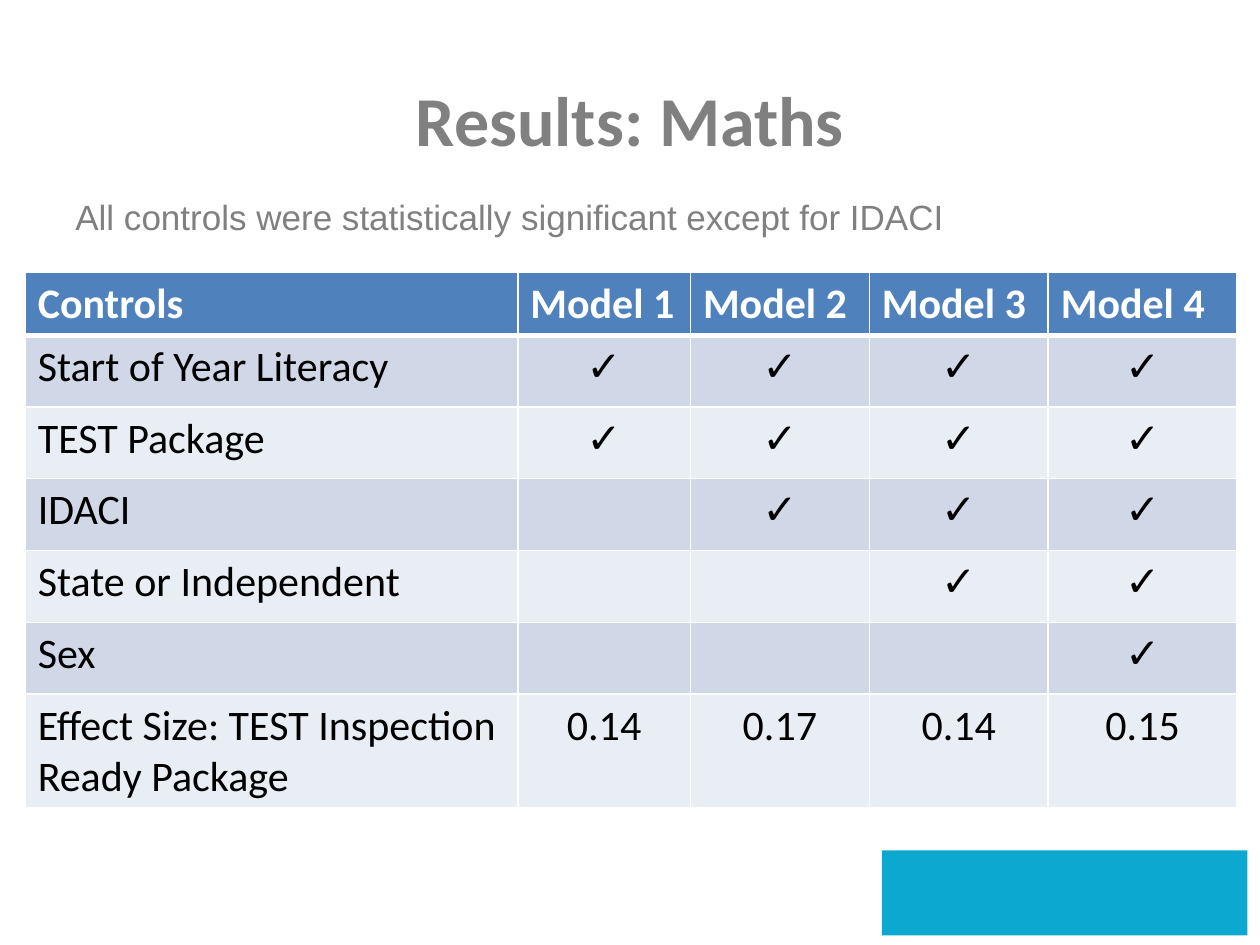
from dataclasses import dataclass

from lxml.etree import SubElement
from pptx import Presentation
from pptx.dml.color import RGBColor
from pptx.enum.shapes import MSO_SHAPE
from pptx.enum.text import MSO_ANCHOR, PP_ALIGN
from pptx.oxml.ns import qn
from pptx.util import Inches, Pt

WIDTH, HEIGHT = 10, 7.5


@dataclass(frozen=True)
class Theme:
    heading_font: str = "Calibri"
    body_font: str = "Arial"
    title_size: int = 40
    note_size: int = 20
    table_size: int = 24
    grey: str = "808080"
    white: str = "FFFFFF"
    black: str = "000000"
    header: str = "4F81BD"
    bands: tuple = ("D0D8E8", "E9EDF4")
    accent: str = "0CA8D0"


THEME = Theme()
CHECK = "✓"
MODEL_COUNT = 4
# Each control with the first model that includes it.
CONTROLS = [
    ("Start of Year Literacy", 1),
    ("TEST Package", 1),
    ("IDACI", 2),
    ("State or Independent", 3),
    ("Sex", 4),
]
EFFECT_LABEL = "Effect Size: TEST Inspection Ready Package"
EFFECT_SIZES = ["0.14", "0.17", "0.14", "0.15"]
COLUMN_WIDTHS = [3.91, 1.37, 1.42, 1.42, 1.5]
ROW_HEIGHTS = [0.37] + [0.57] * len(CONTROLS) + [0.81]


def share(left, top, width, height):
    """Turn shares of the slide's size into lengths."""
    return (Inches(left * WIDTH), Inches(top * HEIGHT),
            Inches(width * WIDTH), Inches(height * HEIGHT))


def add_run(paragraph, text, font, size, color, bold=False):
    run = paragraph.add_run()
    run.text = text
    run.font.name = font
    run.font.size = Pt(size)
    run.font.bold = bold
    run.font.color.rgb = RGBColor.from_string(color)


def add_text(slide, box, text, font, size, bold=False,
             align=PP_ALIGN.LEFT, anchor=MSO_ANCHOR.TOP):
    frame = slide.shapes.add_textbox(*box).text_frame
    frame.word_wrap = True
    frame.vertical_anchor = anchor
    paragraph = frame.paragraphs[0]
    paragraph.alignment = align
    add_run(paragraph, text, font, size, THEME.grey, bold)


def paint(fill, color):
    fill.solid()
    fill.fore_color.rgb = RGBColor.from_string(color)


def set_borders(cell, top, bottom):
    """Draw white cell borders; they must precede the fill in the XML."""
    properties = cell._tc.get_or_add_tcPr()
    for side, width in (("L", 1), ("R", 1), ("T", top), ("B", bottom)):
        line = SubElement(properties, qn(f"a:ln{side}"), w=str(Pt(width)))
        solid = SubElement(line, qn("a:solidFill"))
        SubElement(solid, qn("a:srgbClr"), val=THEME.white)


def table_rows():
    models = range(1, MODEL_COUNT + 1)
    header = ["Controls"] + [f"Model {model}" for model in models]
    checks = [[label] + [CHECK if model >= first else "" for model in models]
              for label, first in CONTROLS]
    return [header, *checks, [EFFECT_LABEL, *EFFECT_SIZES]]


def fill_cell(cell, text, row, column):
    is_header = row == 0
    set_borders(cell, top=3 if row == 1 else 1, bottom=3 if is_header else 1)
    paint(cell.fill, THEME.header if is_header else THEME.bands[(row - 1) % 2])
    paragraph = cell.text_frame.paragraphs[0]
    if column and not is_header:
        paragraph.alignment = PP_ALIGN.CENTER
    if text:
        bold = is_header or (text == CHECK and column <= 2)
        add_run(paragraph, text, THEME.heading_font, THEME.table_size,
                THEME.white if is_header else THEME.black, bold)
    else:
        paragraph.font.size = Pt(THEME.table_size)


def add_controls_table(slide):
    rows = table_rows()
    table = slide.shapes.add_table(
        len(rows), len(COLUMN_WIDTHS), Inches(0.2), Inches(2.16),
        Inches(sum(COLUMN_WIDTHS)), Inches(sum(ROW_HEIGHTS))).table
    for column, width in zip(table.columns, COLUMN_WIDTHS):
        column.width = Inches(width)
    for row, height in zip(table.rows, ROW_HEIGHTS):
        row.height = Inches(height)
    for row, texts in enumerate(rows):
        for column, text in enumerate(texts):
            fill_cell(table.cell(row, column), text, row, column)


def add_block(slide, box, color):
    shape = slide.shapes.add_shape(MSO_SHAPE.RECTANGLE, *box)
    shape.shadow.inherit = False
    paint(shape.fill, color)
    shape.line.fill.background()


def main():
    presentation = Presentation()
    presentation.slide_width = Inches(WIDTH)
    presentation.slide_height = Inches(HEIGHT)
    slide = presentation.slides.add_slide(presentation.slide_layouts[6])
    add_text(slide, share(0.05, 0.04, 0.9, 0.17), "Results: Maths",
             THEME.heading_font, THEME.title_size, bold=True,
             align=PP_ALIGN.CENTER, anchor=MSO_ANCHOR.MIDDLE)
    add_text(slide, share(0.05, 0.2, 0.9, 0.66),
             "All controls were statistically significant except for IDACI",
             THEME.body_font, THEME.note_size)
    add_controls_table(slide)
    add_block(slide, share(0.7, 0.9, 0.29, 0.09), THEME.accent)
    presentation.save("out.pptx")


if __name__ == "__main__":
    main()
